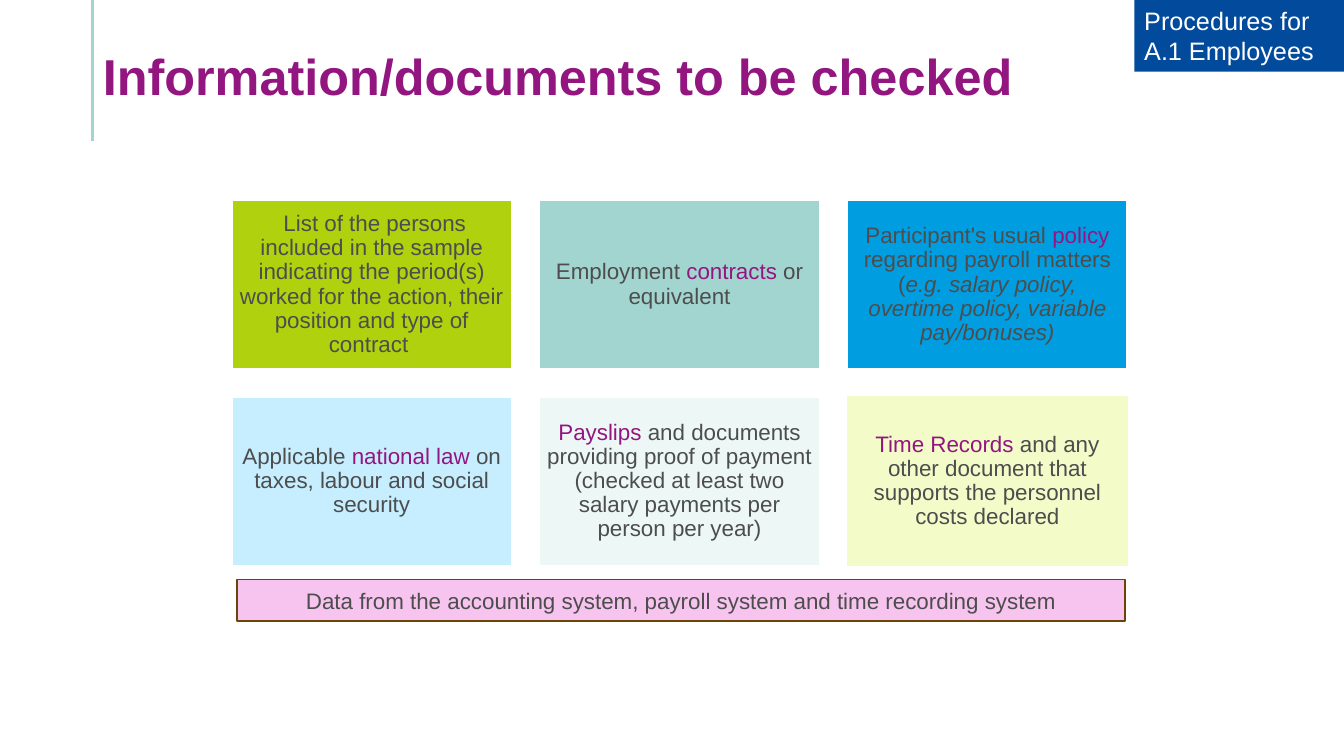
from lxml.etree import SubElement
from pptx import Presentation
from pptx.dml.color import RGBColor
from pptx.enum.shapes import MSO_CONNECTOR as Connector, MSO_SHAPE as Shape
from pptx.enum.text import MSO_ANCHOR as Anchor, MSO_AUTO_SIZE as AutoSize, PP_ALIGN as Align
from pptx.oxml.ns import qn
from pptx.util import Inches, Pt

PURPLE = RGBColor(0x93, 0x16, 0x80)
GREY = RGBColor(0x4D, 0x4D, 0x4D)
WHITE = RGBColor(0xFF, 0xFF, 0xFF)
TEAL = RGBColor(0xA2, 0xD5, 0xD0)
PALE_TEAL = RGBColor(0xEC, 0xF7, 0xF6)
LIME = RGBColor(0xB0, 0xD1, 0x0E)
PALE_LIME = RGBColor(0xF3, 0xFB, 0xC9)
BLUE = RGBColor(0x00, 0x9E, 0xE0)
PALE_BLUE = RGBColor(0xC6, 0xEE, 0xFF)
NAVY = RGBColor(0x02, 0x4B, 0x9C)
PINK = RGBColor(0xF6, 0xC4, 0xEE)
BROWN = RGBColor(0x6B, 0x45, 0x05)

DOCUMENTS = [
    [
        (LIME, WHITE, [(" List of the persons included in the sample indicating the period(s) "
                        "worked for the action, their position and type of contract ", {})]),
        (TEAL, WHITE, [("Employment ", {}), ("contracts", {"color": PURPLE}),
                       (" or equivalent", {})]),
        (BLUE, WHITE, [("Participant's usual ", {}), ("policy", {"color": PURPLE}),
                       (" regarding payroll matters (", {}),
                       ("e.g. salary policy, overtime policy, variable pay/bonuses)",
                        {"italic": True})]),
    ],
    [
        (PALE_BLUE, WHITE, [("Applicable ", {}), ("national law", {"color": PURPLE}),
                            (" on taxes, labour and social security", {})]),
        (PALE_TEAL, WHITE, [("Payslips", {"color": PURPLE}),
                            (" and documents providing proof of payment (checked at least "
                             "two salary payments per person per year)", {})]),
        (PALE_LIME, PALE_LIME, [("Time Records", {"color": PURPLE}),
                                (" and any other document that supports the personnel "
                                 "costs declared", {})]),
    ],
]


def add_text(paragraph, text, size=16, color=GREY, bold=False, italic=False):
    """Append one formatted run to a paragraph."""
    run = paragraph.add_run()
    run.text = text
    font = run.font
    font.name, font.size = "Arial", Pt(size)
    font.bold, font.italic = bold, italic
    font.color.rgb = color


def set_frame(frame, anchor, align, margins=(0.1, 0.05, 0.1, 0.05)):
    """Set up a wrapping text frame and return its first paragraph."""
    frame.word_wrap = True
    frame.vertical_anchor = anchor
    frame.margin_left, frame.margin_top, frame.margin_right, frame.margin_bottom = map(Inches, margins)
    paragraph = frame.paragraphs[0]
    paragraph.alignment = align
    return paragraph


def add_panel(slide, left, top, width, height, fill, outline=None):
    """Add a flat rectangle with an optional thin outline."""
    panel = slide.shapes.add_shape(
        Shape.RECTANGLE, Inches(left), Inches(top), Inches(width), Inches(height))
    panel.shadow.inherit = False
    panel.fill.solid()
    panel.fill.fore_color.rgb = fill
    if outline is None:
        panel.line.fill.background()
    else:
        panel.line.color.rgb = outline
        panel.line.width = Pt(1)
    return panel


def add_heading(slide, left, top, width, height):
    """Place the title with the vertical rule along its left edge."""
    rule = slide.shapes.add_connector(
        Connector.STRAIGHT, Inches(left), Inches(0), Inches(left), Inches(1.4))
    rule.line.color.rgb = TEAL
    rule.line.width = Pt(2.25)
    SubElement(rule._element.spPr, qn("a:effectLst"))
    title = slide.shapes.title
    title.left, title.top = Inches(left), Inches(top)
    title.width, title.height = Inches(width), Inches(height)
    paragraph = set_frame(title.text_frame, Anchor.BOTTOM, Align.LEFT, (0.1, 0.05, 0.1, 0))
    title.text_frame.auto_size = AutoSize.NONE
    add_text(paragraph, "Information/documents to be checked", size=36, color=PURPLE, bold=True)


def add_document_grid(slide, left, top, width, height, gap_x=0.28, gap_y=0.28):
    """Fill the box with the grid of documents to check."""
    rows, columns = len(DOCUMENTS), len(DOCUMENTS[0])
    card_width = (width - gap_x * (columns - 1)) / columns
    card_height = (height - gap_y * (rows - 1)) / rows
    for row, cards in enumerate(DOCUMENTS):
        for column, (fill, outline, parts) in enumerate(cards):
            card = add_panel(slide, left + column * (card_width + gap_x),
                             top + row * (card_height + gap_y),
                             card_width, card_height, fill, outline)
            paragraph = set_frame(card.text_frame, Anchor.MIDDLE, Align.CENTER, (0.07,) * 4)
            paragraph.line_spacing = 0.9
            for text, style in parts:
                add_text(paragraph, text, **style)


def add_data_bar(slide, left, top, width, height):
    """Add the bar naming the systems that supply data."""
    bar = add_panel(slide, left, top, width, height, PINK, BROWN)
    paragraph = set_frame(bar.text_frame, Anchor.MIDDLE, Align.CENTER)
    add_text(paragraph, "Data from the accounting system, payroll system and time recording system")


def add_section_tag(slide, left, top, width, height):
    """Add the section tag in the corner."""
    tag = add_panel(slide, left, top, width, height, NAVY)
    paragraph = set_frame(tag.text_frame, Anchor.TOP, Align.LEFT)
    add_text(paragraph, "Procedures for A.1 Employees", size=18, color=WHITE)


def main():
    """Build and save the slide."""
    deck = Presentation()
    deck.slide_width, deck.slide_height = Inches(13.33), Inches(7.5)
    slide = deck.slides.add_slide(deck.slide_layouts[5])
    add_heading(slide, 0.92, 0.39, 11.5, 0.66)
    add_document_grid(slide, 2.3, 1.99, 8.88, 3.62)
    add_data_bar(slide, 2.35, 5.75, 8.81, 0.41)
    add_section_tag(slide, 11.25, 0, 2.08, 0.71)
    deck.save("out.pptx")


if __name__ == "__main__":
    main()
